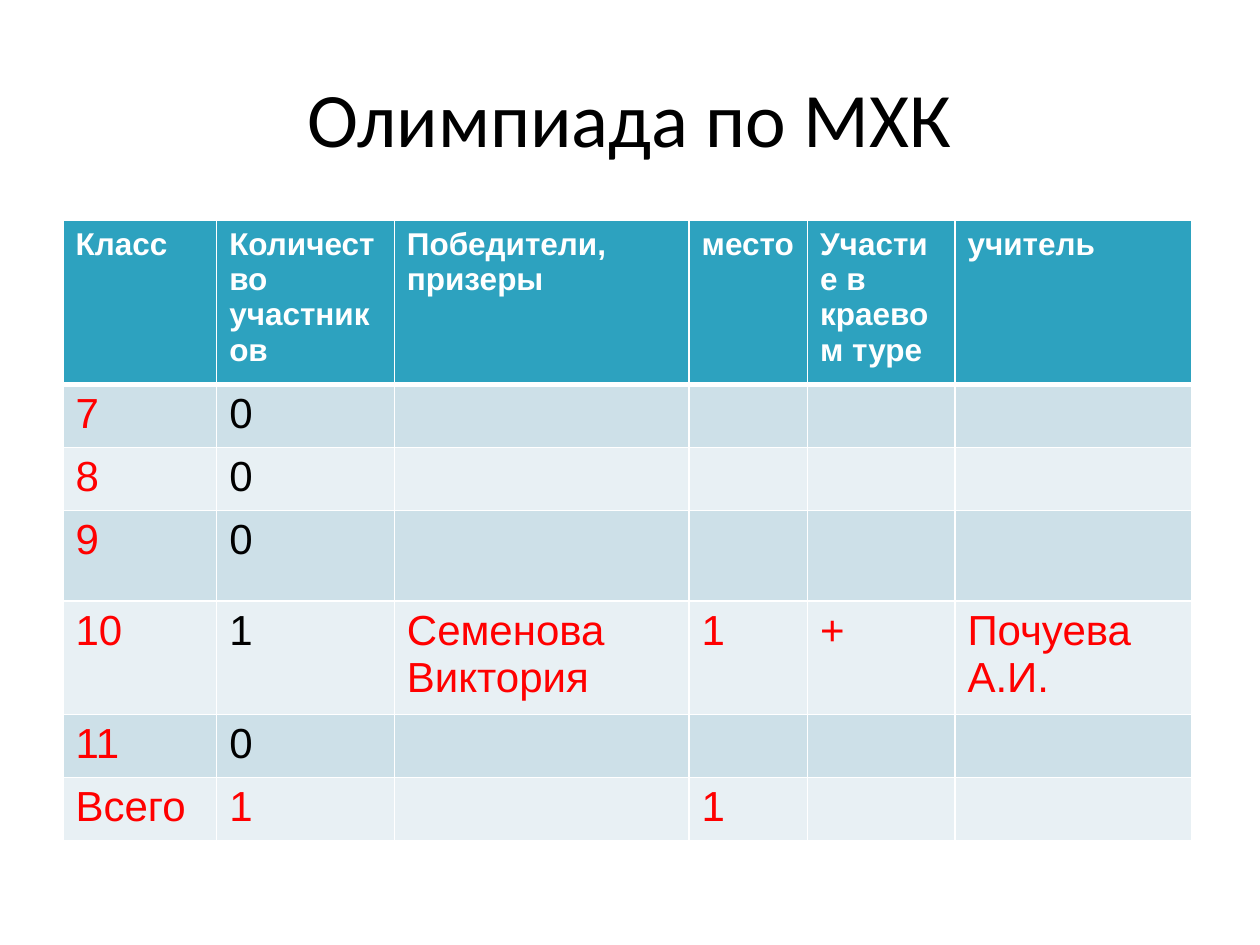
from lxml.etree import SubElement
from pptx import Presentation
from pptx.dml.color import RGBColor
from pptx.enum.text import MSO_ANCHOR, PP_ALIGN
from pptx.oxml.ns import qn
from pptx.util import Inches, Pt

WHITE = RGBColor(0xFF, 0xFF, 0xFF)
BLACK = RGBColor(0x00, 0x00, 0x00)
RED = RGBColor(0xFF, 0x00, 0x00)
HEADER_FILL = RGBColor(0x2D, 0xA2, 0xBF)
BAND_FILLS = [RGBColor(0xE8, 0xF0, 0xF4), RGBColor(0xCD, 0xE0, 0xE8)]

COLUMN_WIDTHS = [1.22, 1.41, 2.34, 0.94, 1.17, 1.88]
ROW_HEIGHTS = [1.3, 0.5, 0.5, 0.72, 0.9, 0.5, 0.5]
ROWS = [
    ["Класс", "Количество участников", "Победители, призеры", "место",
     "Участие в краевом туре", "учитель"],
    ["7", "0", "", "", "", ""],
    ["8", "0", "", "", "", ""],
    ["9", "0", "", "", "", ""],
    ["10", "1", "Семенова Виктория", "1", "+", "Почуева А.И."],
    ["11", "0", "", "", "", ""],
    ["Всего", "1", "", "1", "", ""],
]
LAST_ROW = len(ROWS) - 1


def add_border(cell, side, width):
    """Draw a white line, width in points, on side L, R, T or B of the cell."""
    line = SubElement(cell._tc.get_or_add_tcPr(), qn(f"a:ln{side}"), w=str(Pt(width)))
    fill = SubElement(line, qn("a:solidFill"))
    SubElement(fill, qn("a:srgbClr"), val=str(WHITE))


presentation = Presentation()
presentation.slide_width = Inches(10)
presentation.slide_height = Inches(7.5)
slide = presentation.slides.add_slide(presentation.slide_layouts[5])

title = slide.shapes.title
title.left, title.top = Inches(0.5), Inches(0.3)
title.width, title.height = Inches(9), Inches(1.25)
title.text_frame.text = "Олимпиада по МХК"
title.text_frame.vertical_anchor = MSO_ANCHOR.MIDDLE
paragraph = title.text_frame.paragraphs[0]
paragraph.alignment = PP_ALIGN.CENTER
paragraph.font.name = "Calibri"
paragraph.font.size = Pt(44)
paragraph.font.color.rgb = BLACK

table = slide.shapes.add_table(
    len(ROWS), len(COLUMN_WIDTHS), Inches(0.5), Inches(1.75),
    Inches(sum(COLUMN_WIDTHS)), Inches(sum(ROW_HEIGHTS))).table
for column, width in zip(table.columns, COLUMN_WIDTHS):
    column.width = Inches(width)
for row, height in zip(table.rows, ROW_HEIGHTS):
    row.height = Inches(height)

for row_index, texts in enumerate(ROWS):
    is_header = row_index == 0
    for column_index, text in enumerate(texts):
        cell = table.cell(row_index, column_index)
        for side in "LRTB":
            under_header = (row_index, side) in [(0, "B"), (1, "T")]
            add_border(cell, side, 3 if under_header else 1)
        cell.fill.solid()
        cell.fill.fore_color.rgb = HEADER_FILL if is_header else BAND_FILLS[row_index % 2]

        cell.text = text
        font = cell.text_frame.paragraphs[0].font
        font.name = "Arial"
        font.size = Pt(18 if is_header else 24)
        font.bold = is_header
        if is_header:
            font.color.rgb = WHITE
        elif column_index == 1 and row_index < LAST_ROW:
            font.color.rgb = BLACK
        else:
            font.color.rgb = RED

presentation.save("out.pptx")
